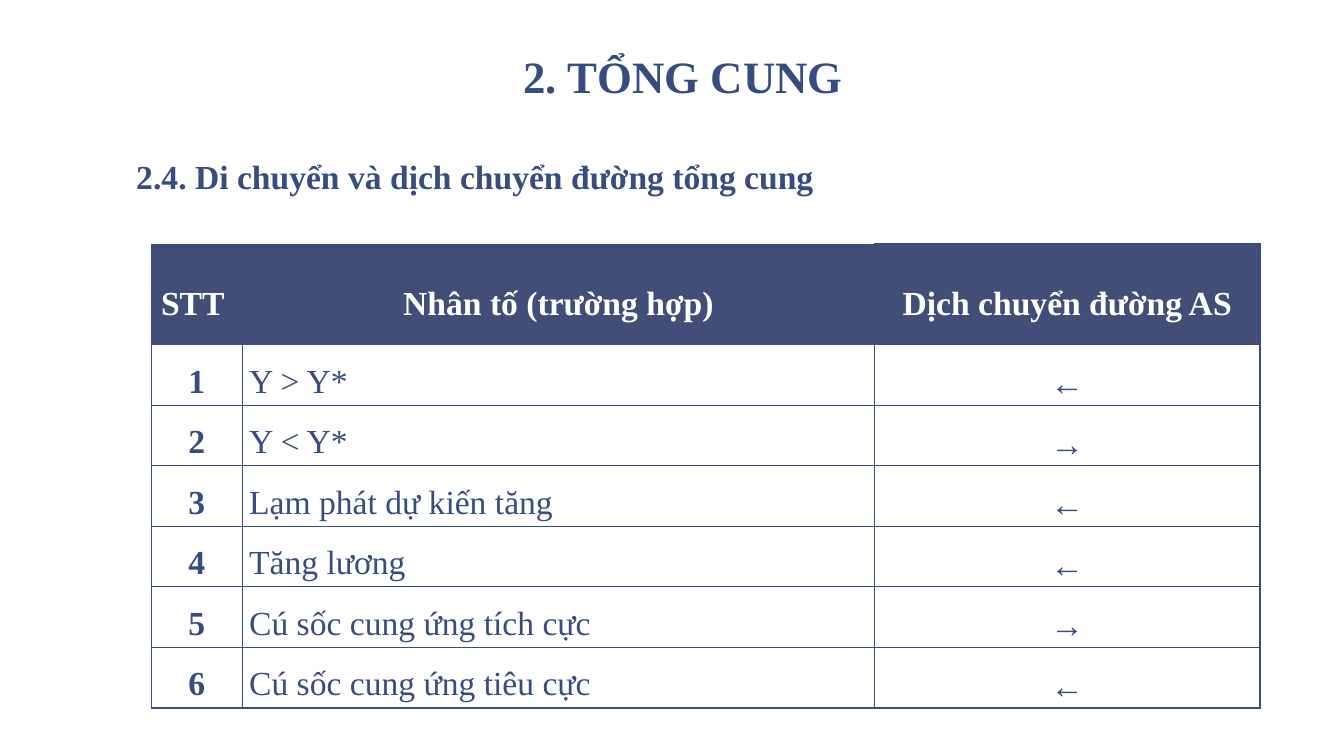
from lxml.etree import SubElement
from pptx import Presentation
from pptx.dml.color import RGBColor
from pptx.enum.text import MSO_ANCHOR, PP_ALIGN
from pptx.oxml.ns import qn
from pptx.util import Pt

FONT = "Times New Roman"
NAVY = "374C81"
HEADER_FILL = "424E78"
WHITE = "FFFFFF"

HEADINGS = ["STT ", "Nhân tố (trường hợp)", "Dịch chuyển đường AS"]
FACTORS = [
    ("Y > Y*", "←"),
    ("Y < Y*", "→"),
    ("Lạm phát dự kiến tăng", "←"),
    ("Tăng lương", "←"),
    ("Cú sốc cung ứng tích cực", "→"),
    ("Cú sốc cung ứng tiêu cực", "←"),
]


def color(value):
    return RGBColor.from_string(value)


class SlideBuilder:
    def __init__(self, slide):
        self.slide = slide
        background = slide.background.fill
        background.solid()
        background.fore_color.rgb = color(WHITE)

    def add_text(self, frame, text, size=24, ink=NAVY, bold=True,
                 align=PP_ALIGN.LEFT, spacing=1.0):
        paragraph = frame.paragraphs[0]
        paragraph.alignment = align
        paragraph.line_spacing = spacing
        run = paragraph.add_run()
        run.text = text
        run.font.name = FONT
        run.font.size = Pt(size)
        run.font.bold = bold
        run.font.color.rgb = color(ink)

    def frame(self, shape, anchor):
        frame = shape.text_frame
        frame.word_wrap = True
        frame.vertical_anchor = anchor
        frame.margin_left = frame.margin_right = Pt(9.36)
        frame.margin_top = frame.margin_bottom = Pt(5)
        return frame

    def title(self, text, left, top, width, height):
        shape = self.slide.shapes.title
        shape.left, shape.top = Pt(left), Pt(top)
        shape.width, shape.height = Pt(width), Pt(height)
        self.add_text(self.frame(shape, MSO_ANCHOR.BOTTOM), text, size=32,
                      align=PP_ALIGN.CENTER, spacing=0.85)

    def subtitle(self, text, left, top, width, height):
        shape = self.slide.shapes.add_textbox(Pt(left), Pt(top), Pt(width), Pt(height))
        self.add_text(self.frame(shape, MSO_ANCHOR.TOP), text, spacing=Pt(27))

    def borders(self, cell, sides):
        properties = cell._tc.get_or_add_tcPr()
        for side in "LRTB":
            line = SubElement(properties, qn(f"a:ln{side}"), w=str(Pt(1)))
            if side in sides:
                fill = SubElement(line, qn("a:solidFill"))
                SubElement(fill, qn("a:srgbClr"), val=NAVY)
            else:
                SubElement(line, qn("a:noFill"))

    def cell(self, cell, text, sides, fill, anchor, **style):
        cell.margin_left = cell.margin_right = Pt(5)
        cell.margin_top = cell.margin_bottom = Pt(0)
        cell.vertical_anchor = anchor
        self.borders(cell, sides)
        cell.fill.solid()
        cell.fill.fore_color.rgb = color(fill)
        self.add_text(cell.text_frame, text, spacing=1.5, **style)

    def table(self, left, top, widths, header_height, row_height):
        height = header_height + row_height * len(FACTORS)
        table = self.slide.shapes.add_table(
            len(FACTORS) + 1, len(widths), Pt(left), Pt(top),
            Pt(sum(widths)), Pt(height)).table
        table.first_row = table.horz_banding = False
        for column, width in zip(table.columns, widths):
            column.width = Pt(width)
        for index, row in enumerate(table.rows):
            row.height = Pt(row_height if index else header_height)
        for index, heading in enumerate(HEADINGS):
            self.cell(table.cell(0, index), heading, "TRB" if index == 2 else "",
                      HEADER_FILL, MSO_ANCHOR.MIDDLE, ink=WHITE, align=PP_ALIGN.CENTER)
        for number, (factor, arrow) in enumerate(FACTORS, 1):
            sides = "LRB" if number == 1 else "LRTB"
            self.cell(table.cell(number, 0), str(number), sides, WHITE,
                      MSO_ANCHOR.TOP, align=PP_ALIGN.CENTER)
            self.cell(table.cell(number, 1), factor, sides, WHITE,
                      MSO_ANCHOR.TOP, bold=False, align=PP_ALIGN.JUSTIFY)
            self.cell(table.cell(number, 2), arrow, "LRTB", WHITE,
                      MSO_ANCHOR.MIDDLE, align=PP_ALIGN.CENTER)


def main():
    presentation = Presentation()
    presentation.slide_width, presentation.slide_height = Pt(960), Pt(540)
    builder = SlideBuilder(presentation.slides.add_slide(presentation.slide_layouts[5]))
    builder.title("2. TỔNG CUNG", 88, 6, 800, 72)
    builder.subtitle("2.4. Di chuyển và dịch chuyển đường tổng cung", 88, 108, 800, 378)
    builder.table(108, 174.3, [65, 451.6, 275.4], 72, 32.4)
    presentation.save("out.pptx")


if __name__ == "__main__":
    main()
